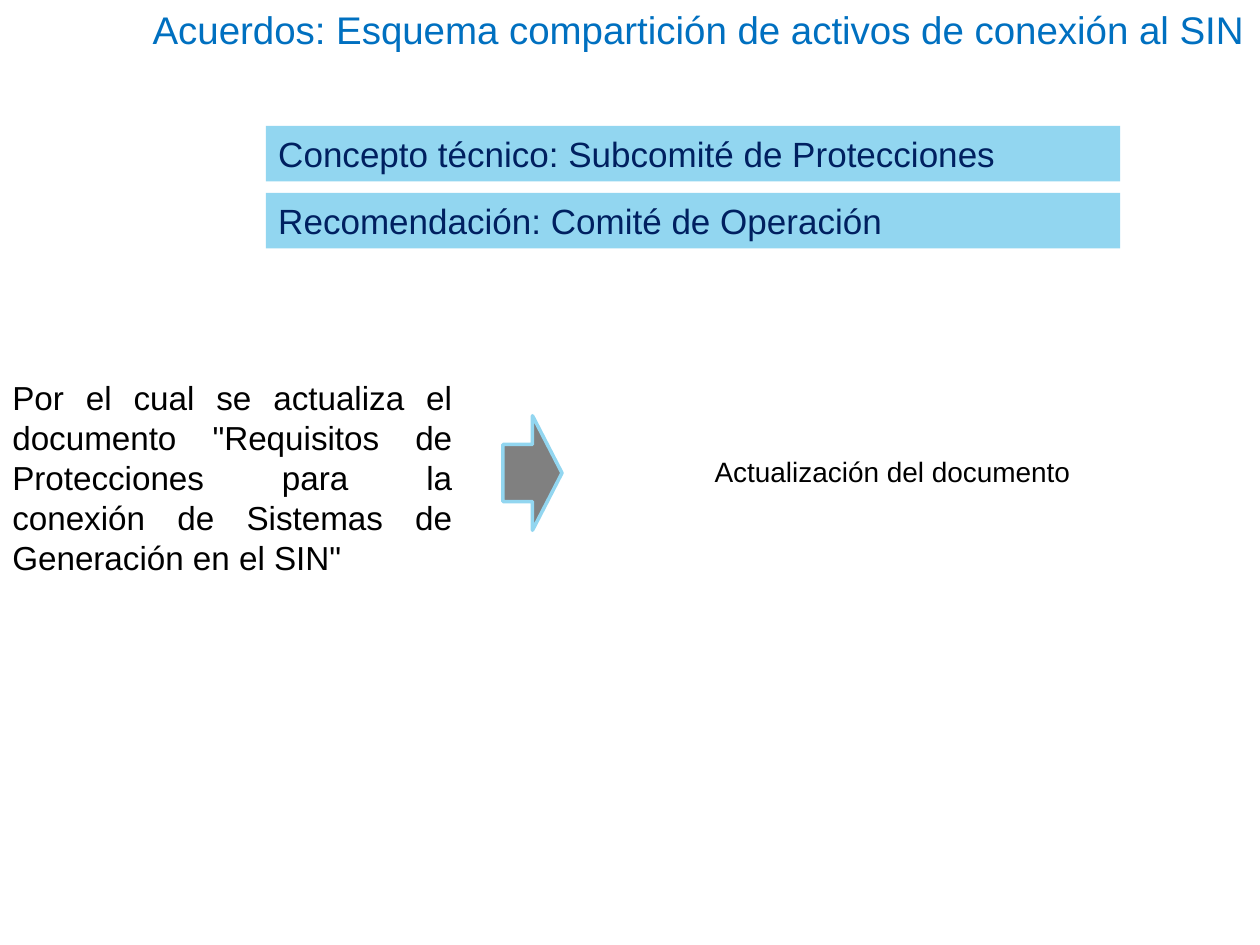
import pptx
import pptx.dml.color
import pptx.enum.shapes
import pptx.enum.text
import pptx.util

Cm = pptx.util.Cm
Pt = pptx.util.Pt
Kind = pptx.enum.shapes.MSO_SHAPE
Align = pptx.enum.text.PP_ALIGN
Grow = pptx.enum.text.MSO_AUTO_SIZE.SHAPE_TO_FIT_TEXT
Top = pptx.enum.text.MSO_ANCHOR.TOP


def paint(form, tint):
    form.color.rgb = pptx.dml.color.RGBColor.from_string(tint)


def flood(shape, tint):
    shape.shadow.inherit = False
    shape.fill.solid()
    shape.fill.fore_color.rgb = pptx.dml.color.RGBColor.from_string(tint)


def style(item, looks):
    for name, value in looks.items():
        setattr(item, name, value)


def write(shape, words, size, tint, align):
    frame = shape.text_frame
    style(frame, {"word_wrap": True, "auto_size": Grow, "vertical_anchor": Top})
    line = frame.paragraphs[0]
    line.alignment = align
    run = line.add_run()
    run.text = words
    style(run.font, {"name": "Arial", "size": Pt(size)})
    paint(run.font, tint)


def label(slide, box, words, size, tint, align):
    shape = slide.shapes.add_textbox(*map(Cm, box))
    write(shape, words, size, tint, align)


def banners(slide, lines):
    group = slide.shapes.add_group_shape()
    for row, words in enumerate(lines):
        box = (5.36, 2.54 + 1.35 * row, 17.22, 1.12)
        shape = group.shapes.add_shape(Kind.RECTANGLE, *map(Cm, box))
        flood(shape, "92D6F0")
        shape.line.fill.background()
        write(shape, words, 20, "002060", Align.JUSTIFY)


def arrow(slide, box):
    shape = slide.shapes.add_shape(Kind.DOWN_ARROW, *map(Cm, box))
    shape.rotation = 270
    flood(shape, "808080")
    shape.line.width = Pt(2)
    paint(shape.line, "92D6F0")


def main():
    deck = pptx.Presentation()
    style(deck, {"slide_width": Cm(25.4), "slide_height": Cm(19.05)})
    slide = deck.slides.add_slide(deck.slide_layouts[6])
    banners(slide, [
        "Concepto técnico: Subcomité de Protecciones",
        "Recomendación: Comité de Operación",
    ])
    arrow(slide, (9.58, 8.94, 2.31, 1.19))
    label(slide, (12.07, 9.04, 11.84, 0.94),
          "Actualización del documento", 16, "000000", Align.CENTER)
    label(slide, (2.39, 0, 22.94, 1.19),
          "Acuerdos: Esquema compartición de activos de conexión al SIN",
          22, "0070C0", Align.RIGHT)
    label(slide, (0, 7.49, 9.37, 4.32),
          'Por el cual se actualiza el documento "Requisitos de Protecciones '
          'para la conexión de Sistemas de Generación en el SIN"',
          19, "000000", Align.JUSTIFY)
    deck.save("out.pptx")


if __name__ == "__main__":
    main()
